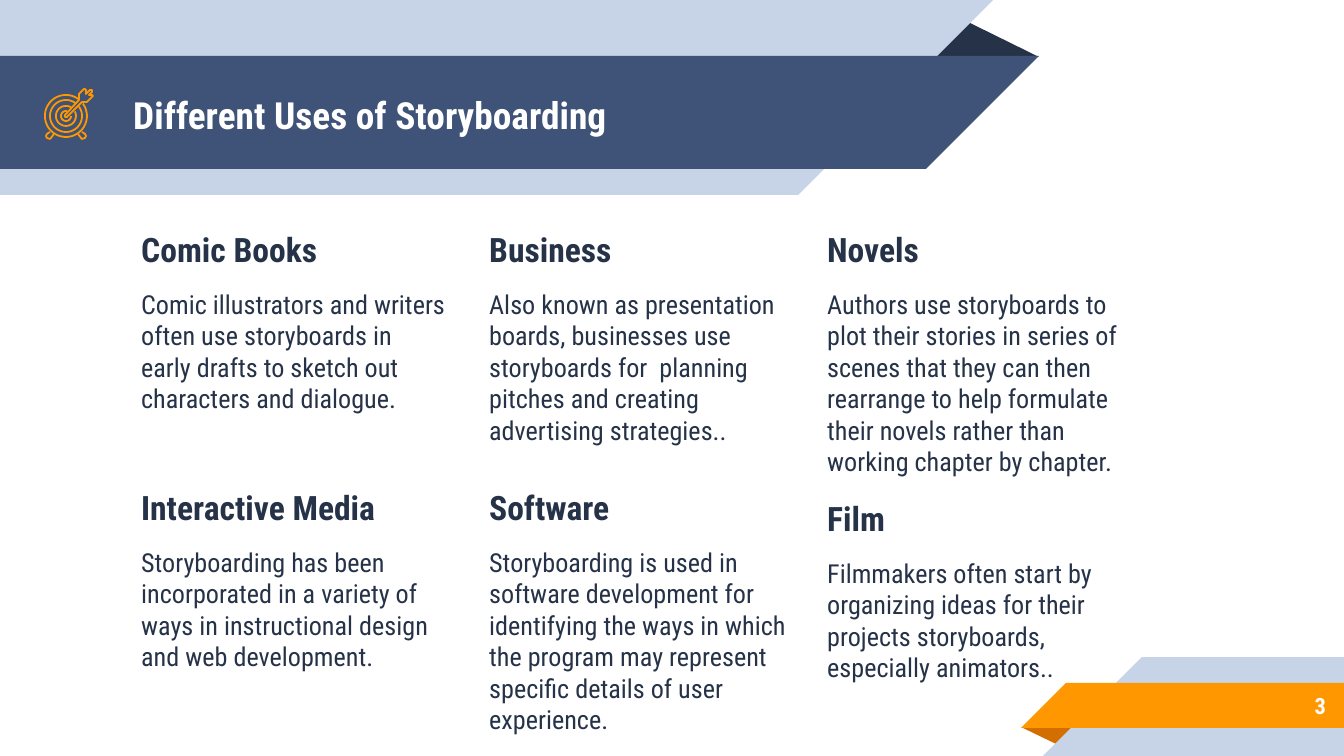
import math
import pptx
import pptx.util
import pptx.dml.color
import pptx.enum.shapes
import pptx.enum.text

Kind = pptx.enum.shapes.MSO_SHAPE
Align = pptx.enum.text.PP_ALIGN
Anchor = pptx.enum.text.MSO_ANCHOR

WIDE, HIGH = 1344, 756
SCALE = 914400 / 134.4
FONT = "Roboto Condensed"
COLORS = {"pale": "C7D3E6", "navy": "3F5378", "ink": "263248",
          "gold": "FF9800", "rust": "D26F00", "white": "FFFFFF"}

TITLE = "Different Uses of Storyboarding"
NUMBER = "3"
COLUMNS = [128, 476, 814]
# Each row: the tops of its three boxes, then heading and body for each
ROWS = [
    ((216, 216, 216), [
        ("Comic Books", "Comic illustrators and writers often use storyboards in early "
         "drafts to sketch out characters and dialogue."),
        ("Business", "Also known as presentation boards, businesses use storyboards for  "
         "planning pitches and creating advertising strategies.."),
        ("Novels", "Authors use storyboards to plot their stories in series of scenes that "
         "they can then rearrange to help formulate their novels rather than working "
         "chapter by chapter."),
    ]),
    ((474, 474, 485), [
        ("Interactive Media", "Storyboarding has been incorporated in a variety of ways in "
         "instructional design and web development."),
        ("Software", "Storyboarding is used in software development for identifying the "
         "ways in which the program may represent specific details of user experience."),
        ("Film", "Filmmakers often start by organizing ideas for their projects "
         "storyboards, especially animators.."),
    ]),
]

# Fold: box, colour, rotation. Band: joint of bar and tip, top, height, colour
HEAD = ((925, 19, 114, 38), "ink", 0, [(798, 0, 195, "pale"), (926, 56, 113, "navy")])
FOOT = ((1021, 727, 58, 19), "rust", 180, [(1142, 657, 99, "pale"), (1066, 683, 45, "gold")])

CENTER = (66, 116)
# Radius, start and end angle in degrees
RINGS = [(21, 54, 396), (16, 54, 396), (10, 60, 387), (5, 80, 360)]
LEG = [(50, 132), (47, 134), (46, 136), (47, 138), (50, 139), (51, 138), (54, 134)]
ARROW = [(92, 95), (89, 95), (92, 92), (92, 90), (90, 90), (86, 94), (86, 90),
         (85, 89), (84, 89), (79, 94), (79, 100), (65, 115), (65, 117), (67, 117),
         (82, 102), (87, 102), (92, 97), (93, 96)]


def px(n):
    return pptx.util.Emu(round(n * SCALE))


def color(name):
    return pptx.dml.color.RGBColor.from_string(COLORS[name])


def block(slide, kind, box, fill, turn=0):
    shape = slide.shapes.add_shape(kind, *map(px, box))
    shape.shadow.inherit = False
    shape.fill.solid()
    shape.fill.fore_color.rgb = color(fill)
    shape.line.fill.background()
    shape.rotation = turn
    return shape


def ribbon(slide, fold, shade, turn, bands, left):
    """Draw the folded corner and its bands, running off the left or right edge."""
    block(slide, Kind.ISOSCELES_TRIANGLE, fold, shade, turn).adjustments[0] = 0.324
    for joint, top, high, fill in bands:
        bar = (0, joint) if left else (joint, WIDE - joint)
        block(slide, Kind.RECTANGLE, (bar[0], top, bar[1], high), fill)
        tip = joint if left else joint - high
        block(slide, Kind.RIGHT_TRIANGLE, (tip, top, high, high), fill, 90 if left else 270)


def stroke(slide, points, close=False):
    dots = [(px(x), px(y)) for x, y in points]
    pen = slide.shapes.build_freeform(*dots[0], scale=1.0)
    pen.add_line_segments(dots[1:], close=close)
    shape = pen.convert_to_shape()
    shape.shadow.inherit = False
    shape.fill.background()
    shape.line.color.rgb = color("gold")
    shape.line.width = pptx.util.Pt(0.96)


def arc(size, start, end):
    angles = [math.radians(start + (end - start) * i / 60) for i in range(61)]
    return [(CENTER[0] + size * math.cos(a), CENTER[1] - size * math.sin(a)) for a in angles]


def write(slide, box, lines, anchor=Anchor.TOP, align=Align.LEFT):
    """Lines hold text, size, bold, colour, space before and space after."""
    frame = slide.shapes.add_textbox(*map(px, box)).text_frame
    frame.word_wrap = True
    frame.vertical_anchor = anchor
    frame.margin_left = frame.margin_right = pptx.util.Inches(0.1)
    frame.margin_top = frame.margin_bottom = pptx.util.Inches(0.1)
    for i, (text, size, bold, tint, before, after) in enumerate(lines):
        para = frame.add_paragraph() if i else frame.paragraphs[0]
        para.alignment = align
        para.space_before = pptx.util.Pt(before)
        para.space_after = pptx.util.Pt(after)
        run = para.add_run()
        run.text = text
        run.font.name = FONT
        run.font.size = pptx.util.Pt(size)
        run.font.bold = bold
        run.font.color.rgb = color(tint)


def main():
    deck = pptx.Presentation()
    deck.slide_width, deck.slide_height = px(WIDE), px(HIGH)
    slide = deck.slides.add_slide(deck.slide_layouts[6])

    ribbon(slide, *HEAD, left=True)
    ribbon(slide, *FOOT, left=False)
    write(slide, (120, 58, 773, 113), [(TITLE, 20, True, "white", 0, 0)], Anchor.MIDDLE)
    for tops, cells in ROWS:
        for left, top, (name, body) in zip(COLUMNS, tops, cells):
            write(slide, (left, top, 331, 223), [(name, 18, True, "ink", 6, 0),
                                                 (body, 14, False, "ink", 10, 10)])
    write(slide, (1120, 682, 219, 47), [(NUMBER, 12, True, "white", 0, 0)],
          Anchor.MIDDLE, Align.RIGHT)

    for ring in RINGS:
        stroke(slide, arc(*ring))
    stroke(slide, LEG)
    stroke(slide, [(2 * CENTER[0] - x, y) for x, y in LEG])
    stroke(slide, ARROW, close=True)
    deck.save("out.pptx")


if __name__ == "__main__":
    main()
